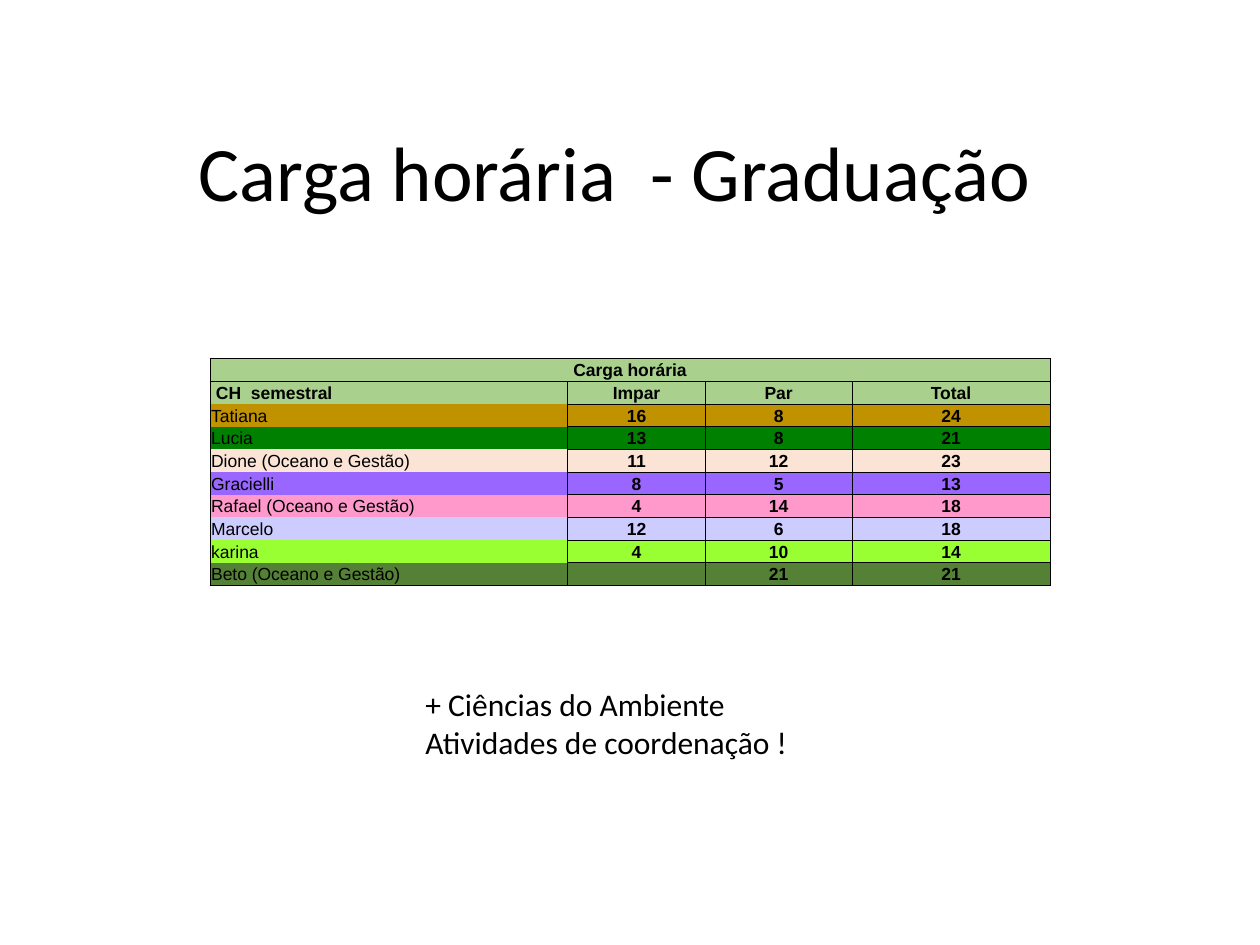
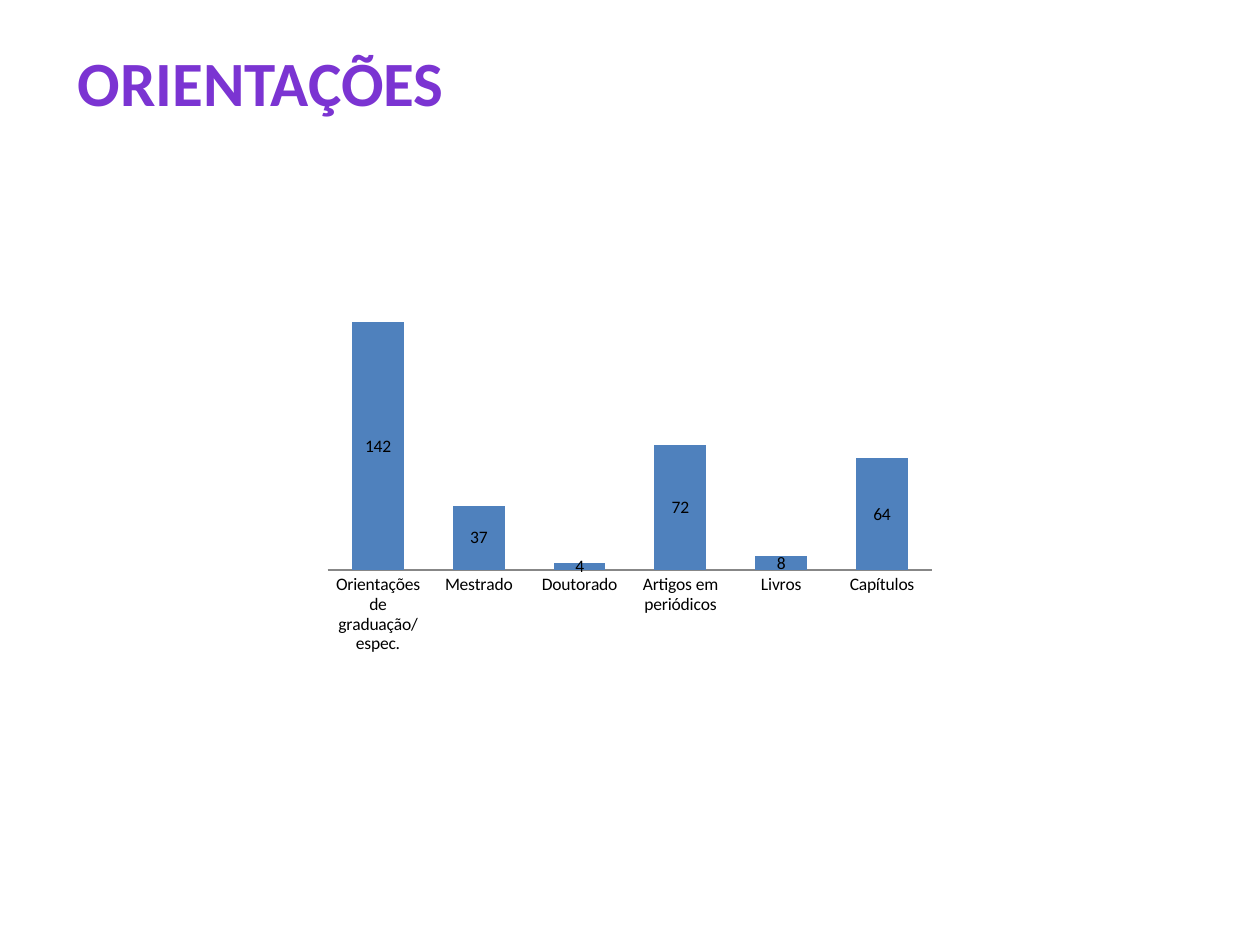
import pptx
import pptx.chart.data
import pptx.dml.color
import pptx.enum.chart
import pptx.enum.text
import pptx.util
from lxml import etree
from pptx.oxml.ns import qn

Pt = pptx.util.Pt
Align = pptx.enum.text.PP_ALIGN

BLACK = "000000"
PURPLE = "7B34D2"
BLUE = "4F81BD"
AXIS_GRAY = "878787"
HEADER_GREEN = "A9D18D"

WORKLOAD = [
    (HEADER_GREEN, "Carga horária", "", "", ""),
    (HEADER_GREEN, " CH  semestral", "Impar", "Par", "Total"),
    ("C09200", "Tatiana", "16", "8", "24"),
    ("008000", "Lucia", "13", "8", "21"),
    ("FBE4D5", "Dione (Oceano e Gestão)", "11", "12", "23"),
    ("9966FF", "Gracielli", "8", "5", "13"),
    ("FF99CC", "Rafael (Oceano e Gestão)", "4", "14", "18"),
    ("CCCCFF", "Marcelo", "12", "6", "18"),
    ("99FF33", "karina", "4", "10", "14"),
    ("548135", "Beto (Oceano e Gestão)", "", "21", "21"),
]
OUTPUT = {
    "Orientações de graduação/espec.": 142,
    "Mestrado": 37,
    "Doutorado": 4,
    "Artigos em periódicos": 72,
    "Livros": 8,
    "Capítulos": 64,
}


def rgb(color):
    return pptx.dml.color.RGBColor.from_string(color)


def write(frame, text, size=18, font="Calibri", color=BLACK, bold=False, align=Align.LEFT):
    for index, line in enumerate(text.split("\n")):
        paragraph = frame.add_paragraph() if index else frame.paragraphs[0]
        paragraph.alignment = align
        if not line:
            etree.SubElement(paragraph._p, qn("a:endParaRPr"), sz=str(size * 100))
            continue
        run = paragraph.add_run()
        run.text = line
        run.font.size = Pt(size)
        run.font.name = font
        run.font.bold = bold
        run.font.color.rgb = rgb(color)


def set_borders(cell, sides):
    properties = cell._tc.get_or_add_tcPr()
    for side in "LRTB":
        line = etree.SubElement(properties, qn(f"a:ln{side}"), w=str(Pt(0.5)))
        if side in sides:
            fill = etree.SubElement(line, qn("a:solidFill"))
            etree.SubElement(fill, qn("a:srgbClr"), val=BLACK)
        else:
            etree.SubElement(line, qn("a:noFill"))


class Deck:
    def __init__(self):
        self.presentation = pptx.Presentation()
        self.presentation.slide_width = Pt(720)
        self.presentation.slide_height = Pt(540)
        self.slide = None

    def add_slide(self):
        self.slide = self.presentation.slides.add_slide(self.presentation.slide_layouts[6])

    def text(self, text, left, top, width, height, wrap=True, **style):
        box = self.slide.shapes.add_textbox(Pt(left), Pt(top), Pt(width), Pt(height))
        box.text_frame.word_wrap = wrap
        box.text_frame.auto_size = pptx.enum.text.MSO_AUTO_SIZE.SHAPE_TO_FIT_TEXT
        write(box.text_frame, text, **style)

    def table(self, rows, left, top, widths, row_height):
        frame = self.slide.shapes.add_table(
            len(rows), len(widths), Pt(left), Pt(top), Pt(sum(widths)), Pt(row_height * len(rows)))
        table = frame.table
        table.first_row = table.horz_banding = False
        for column, width in zip(table.columns, widths):
            column.width = Pt(width)
        last = len(rows) - 1
        for r, (color, *values) in enumerate(rows):
            table.rows[r].height = Pt(row_height)
            for c, value in enumerate(values):
                cell = table.cell(r, c)
                name_cell = c == 0 and r > 0
                sides = "LR" + "T" * (r == 1) + "B" * (r == last) if name_cell else "LRTB"
                set_borders(cell, sides)
                cell.fill.solid()
                cell.fill.fore_color.rgb = rgb(color)
                cell.margin_left = cell.margin_right = cell.margin_top = Pt(0.7)
                cell.margin_bottom = 0
                cell.vertical_anchor = pptx.enum.text.MSO_ANCHOR.MIDDLE
                write(cell.text_frame, value, size=10, font="Arial",
                      bold=r < 2 or c > 0, align=Align.LEFT if name_cell else Align.CENTER)
        table.cell(0, 0).merge(table.cell(0, len(widths) - 1))

    def column_chart(self, values, left, top, width, height, maximum):
        data = pptx.chart.data.CategoryChartData()
        data.categories = list(values)
        data.add_series("Series 1", list(values.values()))
        chart = self.slide.shapes.add_chart(
            pptx.enum.chart.XL_CHART_TYPE.COLUMN_STACKED,
            Pt(left), Pt(top), Pt(width), Pt(height), data).chart
        chart.has_legend = chart.has_title = False
        chart.font.name = "Calibri"
        chart.font.size = Pt(10)
        chart.font.color.rgb = rgb(BLACK)

        categories = chart.category_axis
        categories.major_tick_mark = pptx.enum.chart.XL_TICK_MARK.NONE
        categories.format.line.color.rgb = rgb(AXIS_GRAY)
        categories.format.line.width = Pt(0.75)
        scale = chart.value_axis
        scale.visible = scale.has_major_gridlines = False
        scale.minimum_scale = 0
        scale.maximum_scale = maximum

        plot = chart.plots[0]
        plot.vary_by_categories = False
        plot.gap_width = 95
        plot.overlap = 100
        plot.has_data_labels = True
        plot.data_labels.show_value = True
        plot.data_labels.position = pptx.enum.chart.XL_LABEL_POSITION.CENTER
        columns = plot.series[0].format.fill
        columns.solid()
        columns.fore_color.rgb = rgb(BLUE)


def main():
    deck = Deck()

    deck.add_slide()
    deck.text("Carga horária  - Graduação", 106.5, 67.5, 528.5, 60.5, size=44)
    deck.text("+ Ciências do Ambiente\nAtividades de coordenação !", 236, 388, 264, 51)
    deck.table(WORKLOAD, 120, 205, [204.5, 78.5, 84, 113], 12.96)

    deck.add_slide()
    deck.text("ORIENTAÇÕES", 36, 21.5, 226, 51, wrap=False, size=36, color=PURPLE,
              bold=True, align=Align.CENTER)
    deck.column_chart(OUTPUT, 180, 162, 360, 216, 160)

    deck.presentation.save("out.pptx")


if __name__ == "__main__":
    main()
